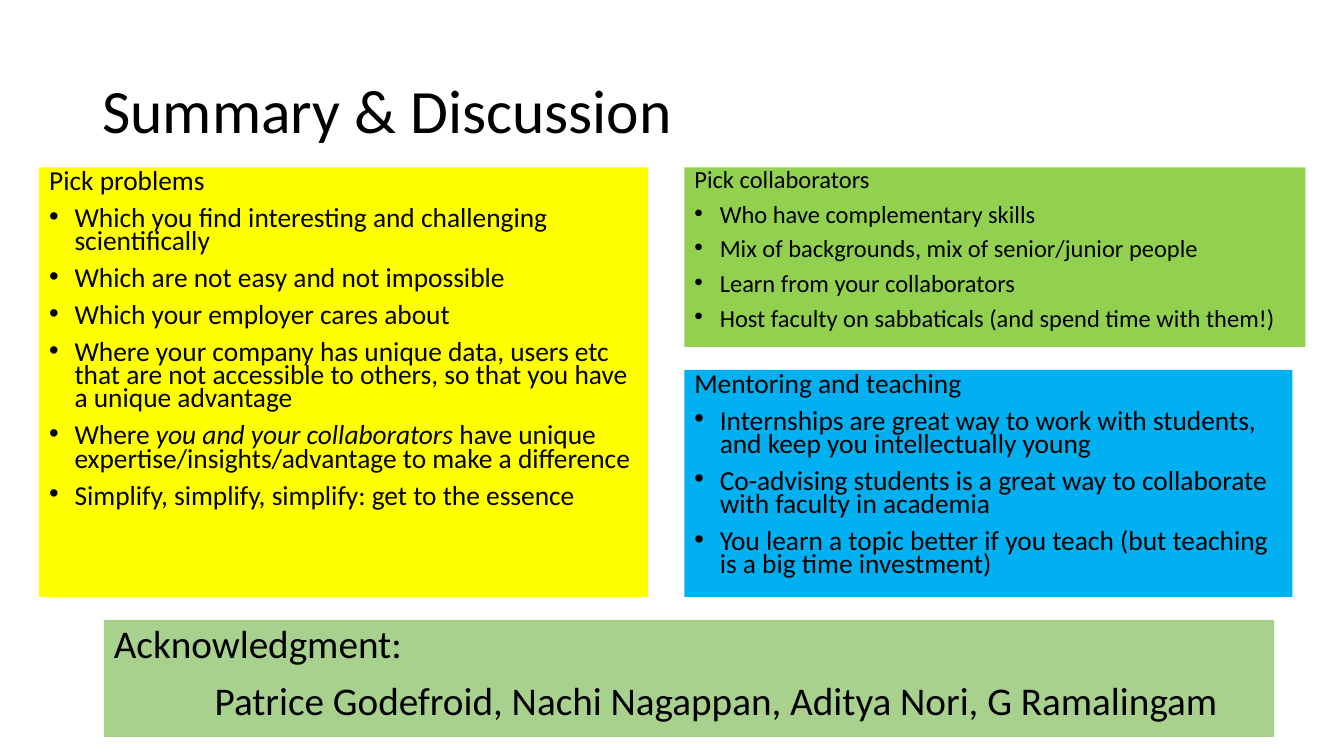
from lxml import etree
from pptx import Presentation
from pptx.dml.color import RGBColor
from pptx.enum.shapes import MSO_SHAPE
from pptx.enum.text import MSO_ANCHOR, PP_ALIGN
from pptx.oxml.ns import qn
from pptx.util import Cm, Pt

COLORS = {
    "text": "000000",
    "problems": "FFFF00",
    "collaborators": "92D050",
    "mentoring": "00B0F0",
    "acknowledgment": "A9D18E",
}
FONT = "Calibri"
BULLET_INDENT = Cm(0.64)


def add_paragraph(frame, text, size, line_spacing=0.7, space_before=10, indent=0, bullet=False):
    """Fill the first paragraph or append one; *asterisks* enclose italic words."""
    paragraph = frame.paragraphs[0]
    if paragraph.runs:
        paragraph = frame.add_paragraph()
    paragraph.alignment = PP_ALIGN.LEFT
    paragraph.line_spacing = line_spacing
    paragraph.space_before = Pt(space_before)
    for index, part in enumerate(text.split("*")):
        run = paragraph.add_run()
        run.text = part
        run.font.name = FONT
        run.font.size = Pt(size)
        run.font.italic = index % 2 == 1
        run.font.color.rgb = RGBColor.from_string(COLORS["text"])
    properties = paragraph._p.get_or_add_pPr()
    if bullet:
        properties.set("marL", str(BULLET_INDENT))
        properties.set("indent", str(-BULLET_INDENT))
        etree.SubElement(properties, qn("a:buFont")).set("typeface", "Arial")
        etree.SubElement(properties, qn("a:buChar")).set("char", "•")
    elif indent:
        properties.set("marL", str(Cm(indent)))


def add_panel(slide, color, left, top, width, height):
    """Add a filled rectangle and return its text frame."""
    shape = slide.shapes.add_shape(MSO_SHAPE.RECTANGLE, Cm(left), Cm(top), Cm(width), Cm(height))
    shape.shadow.inherit = False
    shape.fill.solid()
    shape.fill.fore_color.rgb = RGBColor.from_string(COLORS[color])
    shape.line.fill.background()
    frame = shape.text_frame
    frame.word_wrap = True
    frame.vertical_anchor = MSO_ANCHOR.TOP
    return frame


presentation = Presentation()
presentation.slide_width = Cm(33.87)
presentation.slide_height = Cm(19.05)
slide = presentation.slides.add_slide(presentation.slide_layouts[6])

title = slide.shapes.add_textbox(Cm(2.33), Cm(1.01), Cm(29.21), Cm(3.68)).text_frame
title.word_wrap = True
title.vertical_anchor = MSO_ANCHOR.MIDDLE
add_paragraph(title, "Summary & Discussion", 44, line_spacing=0.9, space_before=0)

# Color, position and size in cm, text size, heading, bullets
panels = [
    ("problems", (0.99, 4.22, 15.34, 10.82), 19.6, "Pick problems", [
        "Which you find interesting and challenging scientifically",
        "Which are not easy and not impossible",
        "Which your employer cares about",
        "Where your company has unique data, users etc that are not accessible to others, "
        "so that you have a unique advantage",
        "Where *you and your collaborators* have unique expertise/insights/advantage "
        "to make a difference",
        "Simplify, simplify, simplify: get to the essence",
    ]),
    ("collaborators", (17.25, 4.22, 15.65, 4.52), 17.5, "Pick collaborators", [
        "Who have complementary skills",
        "Mix of backgrounds, mix of senior/junior people",
        "Learn from your collaborators",
        "Host faculty on sabbaticals (and spend time with them!)",
    ]),
    ("mentoring", (17.25, 9.32, 15.32, 5.72), 19.6, "Mentoring and teaching", [
        "Internships are great way to work with students, and keep you intellectually young",
        "Co-advising students is a great way to collaborate with faculty in academia",
        "You learn a topic better if you teach (but teaching is a big time investment)",
    ]),
]
for color, box, size, heading, bullets in panels:
    frame = add_panel(slide, color, *box)
    add_paragraph(frame, heading, size)
    for bullet in bullets:
        add_paragraph(frame, bullet, size, bullet=True)

acknowledgment = add_panel(slide, "acknowledgment", 2.62, 15.62, 29.49, 2.95)
add_paragraph(acknowledgment, "Acknowledgment:", 28, line_spacing=0.9)
add_paragraph(acknowledgment, "Patrice Godefroid, Nachi Nagappan, Aditya Nori, G Ramalingam", 28,
              line_spacing=0.9, indent=2.54)

presentation.save("out.pptx")
